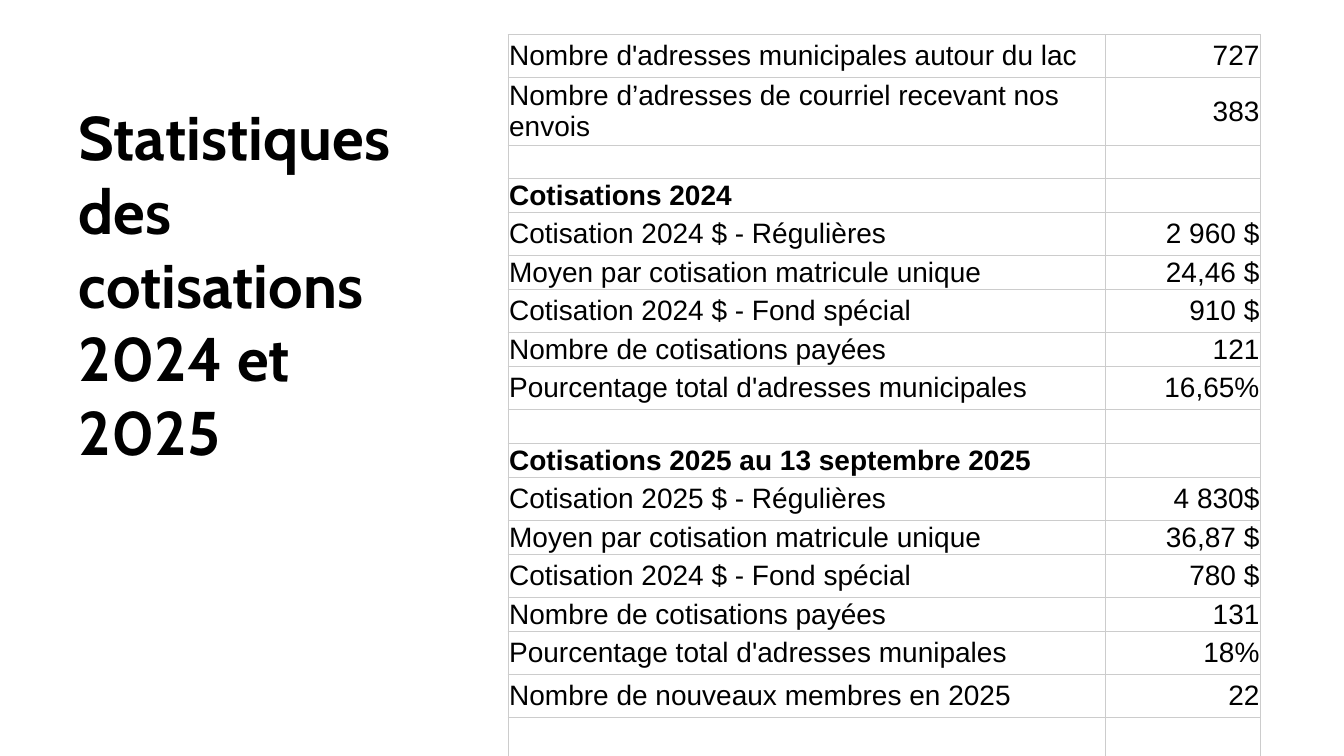
from dataclasses import dataclass

import lxml.etree
import pptx
import pptx.dml.color
import pptx.enum.text
import pptx.oxml.ns
import pptx.slide
import pptx.table
import pptx.text.text
import pptx.util
from pptx.util import Cm

COLOURS = {"text": "000000", "border": "CCCCCC"}
TALL, LOW, TWO_LINES = 1.09, 0.85, 1.55  # row heights in centimetres
COLUMN_WIDTHS = (15.06, 3.91)
BORDER_WIDTH = pptx.util.Pt(0.6)


@dataclass
class Statistic:
    label: str = ""
    value: str = ""
    height: float = LOW
    bold: bool = False


STATISTICS = [
    Statistic("Nombre d'adresses municipales autour du lac", "727", TALL),
    Statistic("Nombre d’adresses de courriel recevant nos envois", "383", TWO_LINES),
    Statistic(),
    Statistic("Cotisations 2024", bold=True),
    Statistic("Cotisation 2024 $ - Régulières", "2 960 $", TALL),
    Statistic("Moyen par cotisation matricule unique", "24,46 $"),
    Statistic("Cotisation 2024 $ - Fond spécial", "910 $", TALL),
    Statistic("Nombre de cotisations payées", "121"),
    Statistic("Pourcentage total d'adresses municipales", "16,65%", TALL),
    Statistic(),
    Statistic("Cotisations 2025 au 13 septembre 2025", bold=True),
    Statistic("Cotisation 2025 $ - Régulières", "4 830$", TALL),
    Statistic("Moyen par cotisation matricule unique", "36,87 $"),
    Statistic("Cotisation 2024 $ - Fond spécial", "780 $", TALL),
    Statistic("Nombre de cotisations payées", "131"),
    Statistic("Pourcentage total d'adresses munipales", "18%", TALL),
    Statistic("Nombre de nouveaux membres en 2025", "22", TALL),
    Statistic(height=TALL),
]


def add_span(para: pptx.text.text._Paragraph, text: str, font: str, size: float, bold: bool) -> None:
    span = para.add_run()
    span.text = text
    span.font.name = font
    span.font.size = pptx.util.Pt(size)
    span.font.bold = bold
    span.font.color.rgb = pptx.dml.color.RGBColor.from_string(COLOURS["text"])


def add_borders(cell: pptx.table._Cell) -> None:
    """Line all four sides; the lines must come before the fill in the cell properties."""
    properties = cell._tc.get_or_add_tcPr()
    qn = pptx.oxml.ns.qn
    for position, side in enumerate(("a:lnL", "a:lnR", "a:lnT", "a:lnB")):
        line = lxml.etree.Element(qn(side), w=str(int(BORDER_WIDTH)))
        fill = lxml.etree.SubElement(line, qn("a:solidFill"))
        lxml.etree.SubElement(fill, qn("a:srgbClr"), val=COLOURS["border"])
        properties.insert(position, line)


def fill_cell(cell: pptx.table._Cell, text: str, bold: bool, alignment: pptx.enum.text.PP_ALIGN) -> None:
    cell.margin_left = cell.margin_right = Cm(0.03)
    cell.margin_top = cell.margin_bottom = Cm(0)
    cell.vertical_anchor = pptx.enum.text.MSO_ANCHOR.MIDDLE
    cell.fill.background()
    add_borders(cell)
    if text:
        para = cell.text_frame.paragraphs[0]
        para.alignment = alignment
        add_span(para, text, "Arial", 20, bold)


def add_statistics_table(page: pptx.slide.Slide) -> None:
    height = sum(statistic.height for statistic in STATISTICS)
    table = page.shapes.add_table(
        len(STATISTICS), len(COLUMN_WIDTHS), Cm(12.8), Cm(0.87), Cm(sum(COLUMN_WIDTHS)), Cm(height)
    ).table
    table.first_row = False
    table.horz_banding = False
    for column, width in zip(table.columns, COLUMN_WIDTHS):
        column.width = Cm(width)
    for row, statistic in zip(table.rows, STATISTICS):
        row.height = Cm(statistic.height)
        label_cell, value_cell = row.cells
        fill_cell(label_cell, statistic.label, statistic.bold, pptx.enum.text.PP_ALIGN.LEFT)
        fill_cell(value_cell, statistic.value, statistic.bold, pptx.enum.text.PP_ALIGN.RIGHT)


def format_title(page: pptx.slide.Slide) -> None:
    title = page.shapes.title
    title.left, title.top, title.width, title.height = Cm(1.73), Cm(2.36), Cm(9.17), Cm(9.65)
    frame = title.text_frame
    frame.word_wrap = True
    frame.auto_size = pptx.enum.text.MSO_AUTO_SIZE.SHAPE_TO_FIT_TEXT
    frame.vertical_anchor = pptx.enum.text.MSO_ANCHOR.TOP
    para = frame.paragraphs[0]
    para.alignment = pptx.enum.text.PP_ALIGN.LEFT
    add_span(para, "Statistiques des cotisations 2024 et 2025", "Cabin", 44, True)


def main() -> None:
    deck = pptx.Presentation()
    deck.slide_width, deck.slide_height = Cm(33.87), Cm(19.05)
    page = deck.slides.add_slide(deck.slide_layouts.get_by_name("Title Only"))
    format_title(page)
    add_statistics_table(page)
    deck.save("out.pptx")


if __name__ == "__main__":
    main()
